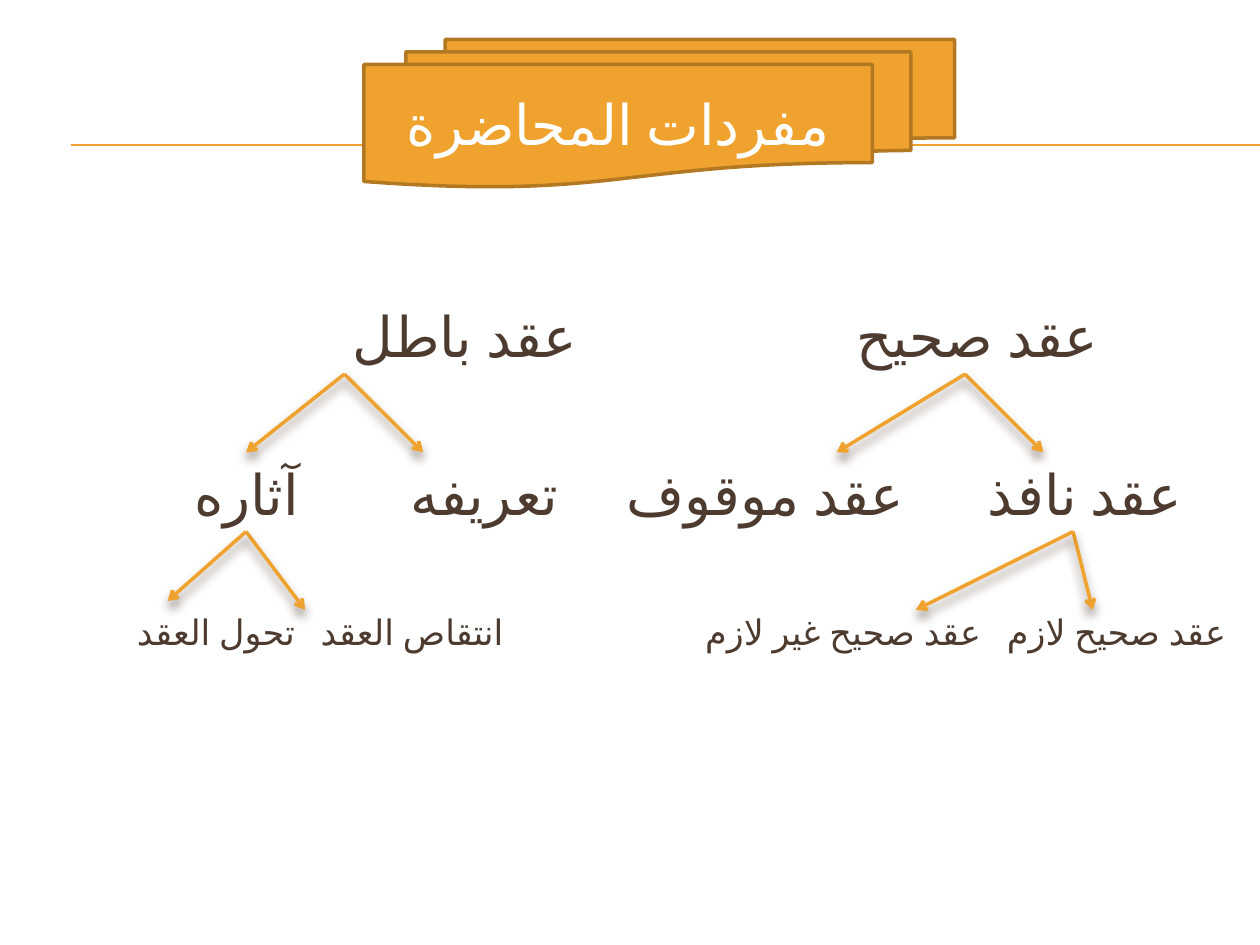
from lxml import etree
from pptx import Presentation
from pptx import util as u
from pptx.dml.color import RGBColor
from pptx.enum import lang, shapes, text
from pptx.oxml import parse_xml
from pptx.oxml.ns import nsdecls, qn

COLORS = {"gold": "F0A22E", "edge": "B27822", "brown": "4E3B30", "white": "FFFFFF"}
FONT = "Roboto"


def write(frame, content, size=32, color="brown"):
    frame.margin_left = frame.margin_right = frame.margin_top = frame.margin_bottom = 0
    frame.word_wrap = True
    paragraph = frame.paragraphs[0]
    paragraph.alignment = text.PP_ALIGN.CENTER
    paragraph._p.get_or_add_pPr().set("rtl", "1")
    run = paragraph.add_run()
    run.text = content
    run.font.size = u.Pt(size)
    run.font.name = FONT
    run.font.language_id = lang.MSO_LANGUAGE_ID.ARABIC
    run.font.color.rgb = RGBColor.from_string(COLORS[color])


class Board:
    """Draws the elements of one slide in a shared style."""

    def __init__(self, slide):
        self.shapes = slide.shapes

    def line(self, start, end, width=0.75, effect=""):
        line = self.shapes.add_connector(
            shapes.MSO_CONNECTOR.STRAIGHT, *map(u.Pt, (*start, *end)))
        line.line.color.rgb = RGBColor.from_string(COLORS["gold"])
        line.line.width = u.Pt(width)
        line._element.spPr.append(parse_xml(
            f'<a:effectLst {nsdecls("a")}>{effect}</a:effectLst>'))
        return line

    def arrow(self, start, end):
        shadow = (f'<a:outerShdw blurRad="{u.Pt(6)}" dist="{u.Pt(4)}" dir="5400000" '
                  f'rotWithShape="0"><a:srgbClr val="{COLORS["brown"]}">'
                  '<a:alpha val="60000"/></a:srgbClr></a:outerShdw>')
        arrow = self.line(start, end, 2, shadow)
        etree.SubElement(arrow.line._get_or_add_ln(), qn("a:tailEnd")).set("type", "arrow")

    def label(self, content, center, top, width, size):
        box = self.shapes.add_textbox(
            *map(u.Pt, (center - width / 2, top, width, size * 1.2)))
        write(box.text_frame, content, size)

    def banner(self, content, left, top, width, height):
        banner = self.shapes.add_shape(
            shapes.MSO_SHAPE.FLOWCHART_MULTIDOCUMENT, *map(u.Pt, (left, top, width, height)))
        banner.shadow.inherit = False
        banner.fill.solid()
        banner.fill.fore_color.rgb = RGBColor.from_string(COLORS["gold"])
        banner.line.color.rgb = RGBColor.from_string(COLORS["edge"])
        banner.line.width = u.Pt(2)
        banner.text_frame.vertical_anchor = text.MSO_ANCHOR.MIDDLE
        write(banner.text_frame, content, color="white")


ROWS = [
    (172.5, 32, [("عقد صحيح", 558.6, 150), ("عقد باطل", 265.7, 140)]),
    (262.5, 32, [("عقد نافذ", 620, 122), ("عقد موقوف", 437.4, 172),
                 ("تعريفه", 276.6, 100), ("آثاره", 141, 80)]),
    (349, 20, [("عقد صحيح لازم", 638, 136), ("عقد صحيح غير لازم", 481.7, 168),
               ("انتقاص العقد", 235.4, 114), ("تحول العقد", 123.4, 100)]),
]
BRANCHES = {
    (551.5, 213.8): [(596.2, 258.5), (478.1, 258.5)],
    (196.8, 213.8): [(241.8, 258.5), (140.6, 258.5)],
    (613.2, 303.8): [(624.4, 348.5), (523.4, 348.5)],
    (140.6, 303.8): [(174.3, 348.5), (95.8, 343.4)],
}


def main():
    deck = Presentation()
    deck.slide_width, deck.slide_height = u.Pt(720), u.Pt(540)
    board = Board(deck.slides.add_slide(deck.slide_layouts[6]))
    for rule in (82.8, 83.1):
        board.line((40.5, rule), (720, rule))
    for top, size, labels in ROWS:
        for content, center, width in labels:
            board.label(content, center, top, width, size)
    board.banner("مفردات المحاضرة", 208, 22.5, 337.5, 84.4)
    for apex, tips in BRANCHES.items():
        for tip in tips:
            board.arrow(apex, tip)
    deck.save("out.pptx")


if __name__ == "__main__":
    main()
